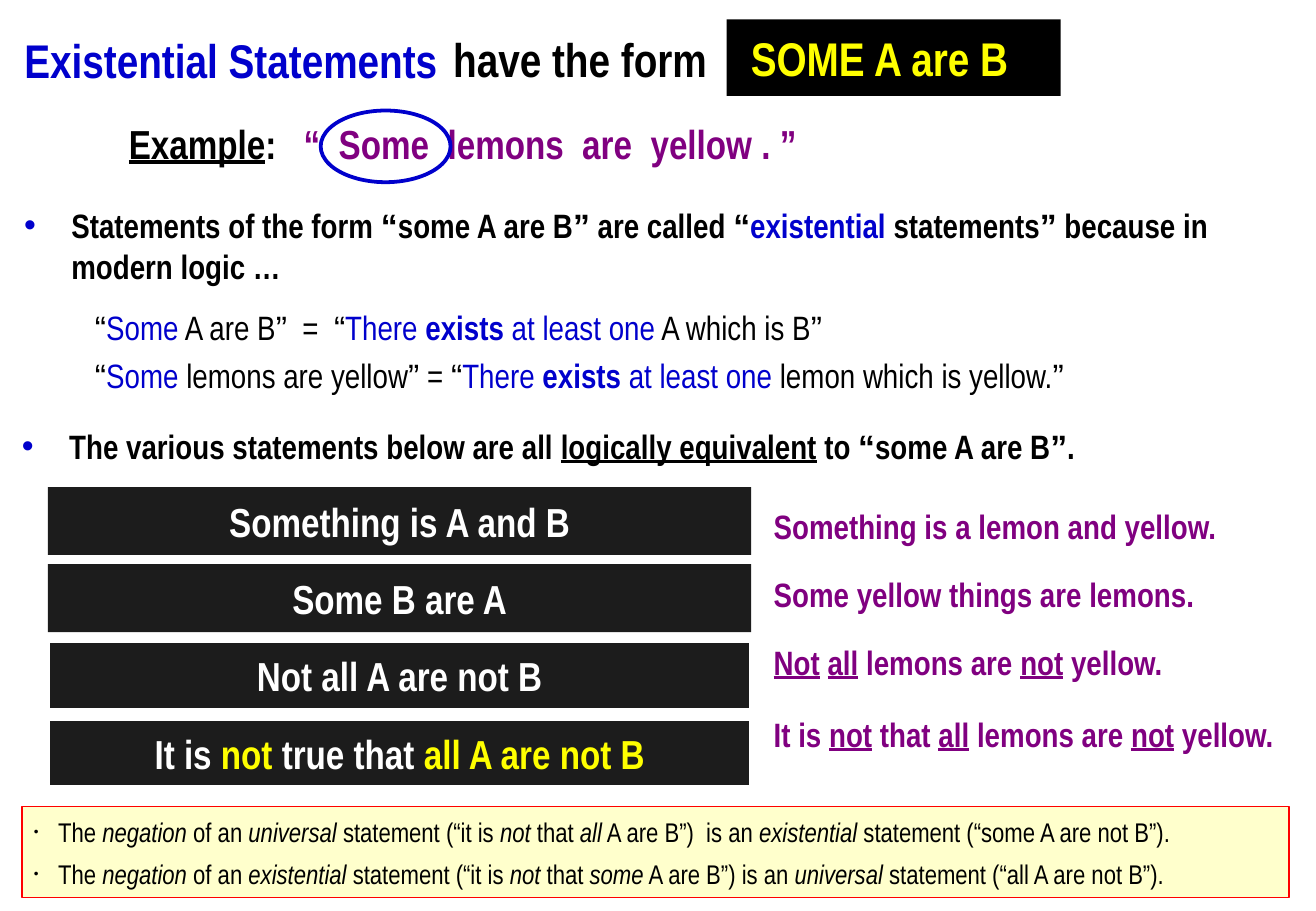
from itertools import groupby

from lxml import etree
from pptx import Presentation
from pptx.dml.color import RGBColor
from pptx.enum import shapes, text
from pptx.oxml import ns
from pptx.util import Pt

BLACK = RGBColor(0x00, 0x00, 0x00)
WHITE = RGBColor(0xFF, 0xFF, 0xFF)
CHARCOAL = RGBColor(0x1C, 0x1C, 0x1C)
BLUE = RGBColor(0x00, 0x00, 0xCC)
YELLOW = RGBColor(0xFF, 0xFF, 0x00)
PURPLE = RGBColor(0x80, 0x00, 0x80)
CREAM = RGBColor(0xFF, 0xFF, 0xCC)
RED = RGBColor(0xFF, 0x00, 0x00)

FONT = "Arial Narrow"
MARKS = "*_/^"  # switch bold, underline, italic and accent colour
MIDDLE = text.MSO_ANCHOR.MIDDLE
TOP = text.MSO_ANCHOR.TOP
RECTANGLE = shapes.MSO_SHAPE.RECTANGLE

EQUIVALENTS = [
    "Something is A and B",
    "Some B are A",
    "Not all A are not B",
    "It is ^not^ true that ^all A are not B^",
]
LEMON_LINES = [
    ("Something is a lemon and yellow.", 0),
    ("Some yellow things are lemons.", 16.5),
    ("_Not_ _all_ lemons are _not_ yellow.", 16.5),
    ("It is _not_ that _all_ lemons are _not_ yellow.", 18.7),
]
NOTES = [
    ("The /negation/ of an /universal/ statement (“it is /not/ that /all/ A are B”)"
     "  is an /existential/ statement (“some A are not B”).", 1.1),
    ("The /negation/ of an /existential/ statement (“it is /not/ that /some/ A are B”)"
     " is an /universal/ statement (“all A are not B”).", 1.3),
]


def write(para, wording, size, color=BLACK, accent=BLUE, bold=True, quote_font=FONT):
    """Add runs to a paragraph; each character in MARKS switches a style."""
    def kind(char):
        return char if char in MARKS else "quote" if char in "“”" else "plain"

    active = set()
    for group, chars in groupby(wording, kind):
        if group in MARKS:
            active ^= {group}
            continue
        span = para.add_run()
        span.text = "".join(chars)
        span.font.name = quote_font if group == "quote" else FONT
        span.font.size = Pt(size)
        span.font.bold = bold != ("*" in active)
        span.font.underline = "_" in active
        span.font.italic = "/" in active
        span.font.color.rgb = accent if "^" in active else color


def prepare_frame(box, anchor=TOP, insets=(0, 0, 0, 0)):
    frame = box.text_frame
    frame.word_wrap = True
    frame.auto_size = text.MSO_AUTO_SIZE.NONE
    frame.vertical_anchor = anchor
    (frame.margin_left, frame.margin_top,
     frame.margin_right, frame.margin_bottom) = map(Pt, insets)
    frame.paragraphs[0].alignment = text.PP_ALIGN.LEFT
    return frame


def add_text(page, place, **options):
    return prepare_frame(page.shapes.add_textbox(*map(Pt, place)), **options)


def add_figure(page, preset, place, fill=None, line=None, width=2.25):
    figure = page.shapes.add_shape(preset, *map(Pt, place))
    figure.shadow.inherit = False
    if fill is None:
        figure.fill.background()
    else:
        figure.fill.solid()
        figure.fill.fore_color.rgb = fill
    if line is None:
        figure.line.fill.background()
    else:
        figure.line.color.rgb = line
        figure.line.width = Pt(width)
    return figure


def next_paragraph(frame, before=0, spacing=1.0):
    first = frame.paragraphs[0]
    para = frame.add_paragraph() if first.runs else first
    para.alignment = text.PP_ALIGN.LEFT
    para.space_before = Pt(before)
    para.line_spacing = spacing
    return para


def indent(para, left, bullet_color=None, bullet_percent=100):
    """Indent a paragraph; with a bullet colour, hang a bullet in the indent."""
    props = para._p.get_or_add_pPr()
    props.set("marL", str(Pt(left)))
    props.set("indent", str(Pt(0 if bullet_color is None else -left)))
    if bullet_color is None:
        return
    color = etree.SubElement(props, ns.qn("a:buClr"))
    etree.SubElement(color, ns.qn("a:srgbClr"), val=str(bullet_color))
    etree.SubElement(props, ns.qn("a:buSzPct"), val=str(bullet_percent * 1000))
    etree.SubElement(props, ns.qn("a:buFont"), typeface="Arial")
    etree.SubElement(props, ns.qn("a:buChar"), char="•")


def add_heading(page):
    title = page.shapes.title
    title.left, title.top, title.width, title.height = map(Pt, (14.4, 18.7, 250, 33.8))
    write(prepare_frame(title, MIDDLE).paragraphs[0], "Existential Statements", 28, BLUE)
    frame = add_text(page, (268.6, 18, 160, 33.8), anchor=MIDDLE)
    write(frame.paragraphs[0], "have the form", 28)
    form = add_figure(page, RECTANGLE, (430.6, 11.5, 198, 45.4), BLACK)
    frame = prepare_frame(form, MIDDLE, (14.4, 0, 0, 0))
    write(frame.paragraphs[0], "SOME A are B", 28, YELLOW)


def add_example(page):
    frame = add_text(page, (76.4, 70.6, 100, 30))
    write(frame.paragraphs[0], "_Example_:", 24)
    frame = add_text(page, (180, 70.6, 340, 30))
    write(frame.paragraphs[0], "“  Some  lemons  are  yellow . ”", 24, PURPLE)
    add_figure(page, shapes.MSO_SHAPE.OVAL, (190.1, 65.5, 77, 42.5), line=BLUE)


def add_explanation(page):
    frame = add_text(page, (7.2, 118, 762.5, 120), insets=(7.2, 3.6, 7.2, 3.6))
    para = next_paragraph(frame)
    indent(para, 28, BLUE)
    write(para, "Statements of the form “some A are B” are called “^existential^ statements”"
                " because in modern logic …", 20, quote_font="Arial")
    meanings = [
        ("“^Some^ A are B”  =  “^There *exists* at least one^ A which is B”", 2.4, 1.4),
        ("“^Some^ lemons are yellow” = “^There *exists* at least one^"
         " lemon which is yellow.”", 4.7, 1.0),
    ]
    for wording, before, spacing in meanings:
        para = next_paragraph(frame, before, spacing)
        indent(para, 42)
        write(para, wording, 20, bold=False, quote_font="Arial")

    frame = add_text(page, (10, 247, 741, 32.4), insets=(3, 3, 3, 3))
    para = next_paragraph(frame, spacing=1.1)
    indent(para, 28, BLUE)
    write(para, "The various statements below are all _logically equivalent_ to “some A are B”.",
          20, quote_font="Arial")


def add_equivalents(page):
    for row, wording in enumerate(EQUIVALENTS):
        outline = WHITE if row >= 2 else None
        bar = add_figure(page, RECTANGLE, (28.4, 288.7 + 45.8 * row, 416.9, 40.3),
                         CHARCOAL, outline)
        para = prepare_frame(bar, MIDDLE, (3, 5.8, 3, 5.8)).paragraphs[0]
        para.alignment = text.PP_ALIGN.CENTER
        write(para, wording, 24, WHITE, YELLOW)
    frame = add_text(page, (458.6, 299.5, 321, 156))
    for wording, before in LEMON_LINES:
        write(next_paragraph(frame, before), wording, 20, PURPLE)


def add_notes(page):
    panel = add_figure(page, RECTANGLE, (13, 478, 751, 54), CREAM, RED, 0.75)
    frame = prepare_frame(panel, insets=(7.2, 3.6, 7.2, 3.6))
    for wording, spacing in NOTES:
        para = next_paragraph(frame, spacing=spacing)
        indent(para, 14.4, BLACK, 50)
        write(para, wording, 16, bold=False)


def main():
    deck = Presentation()
    deck.slide_width, deck.slide_height = Pt(780), Pt(540)
    page = deck.slides.add_slide(deck.slide_layouts[5])
    add_heading(page)
    add_example(page)
    add_explanation(page)
    add_equivalents(page)
    add_notes(page)
    deck.save("out.pptx")


if __name__ == "__main__":
    main()
